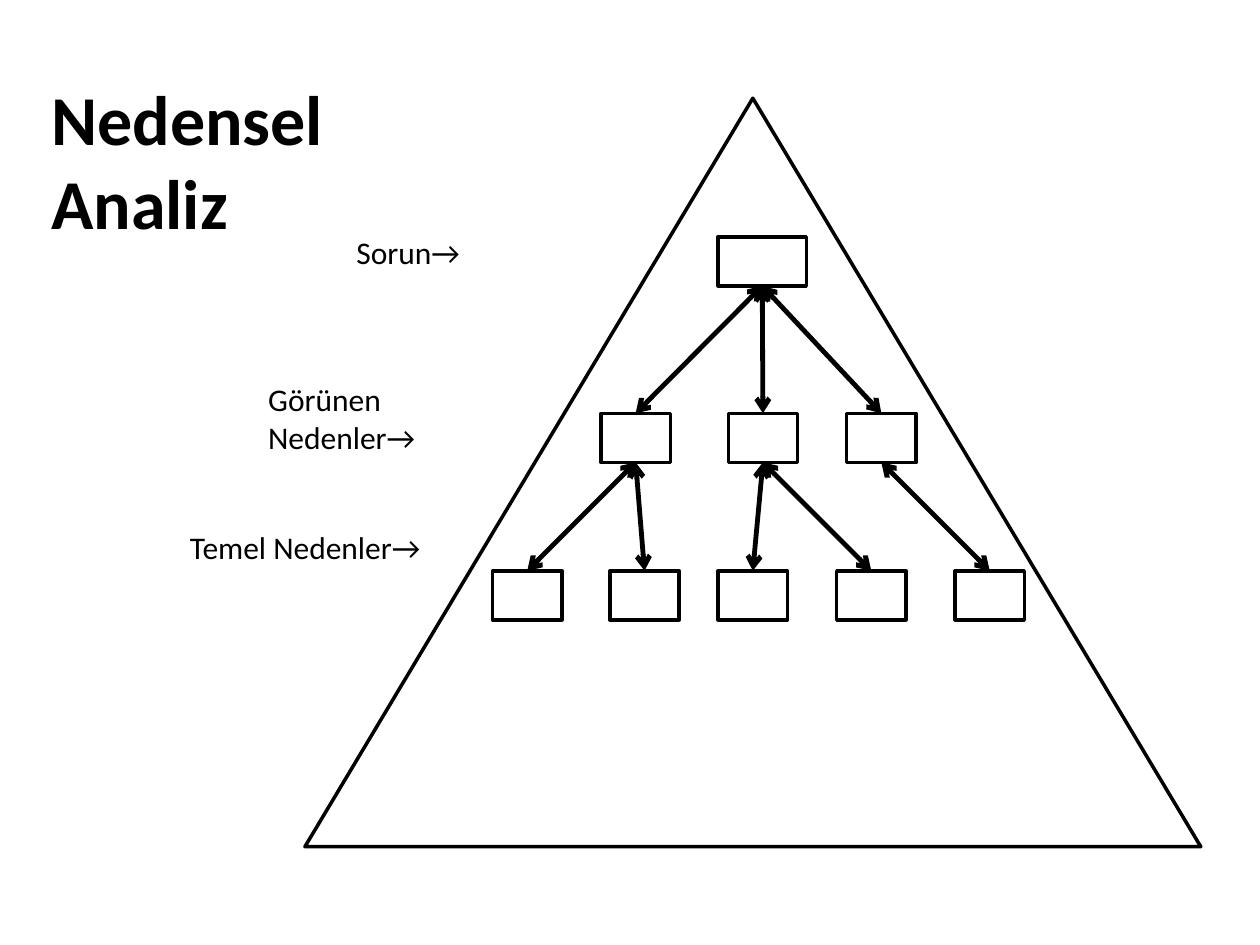
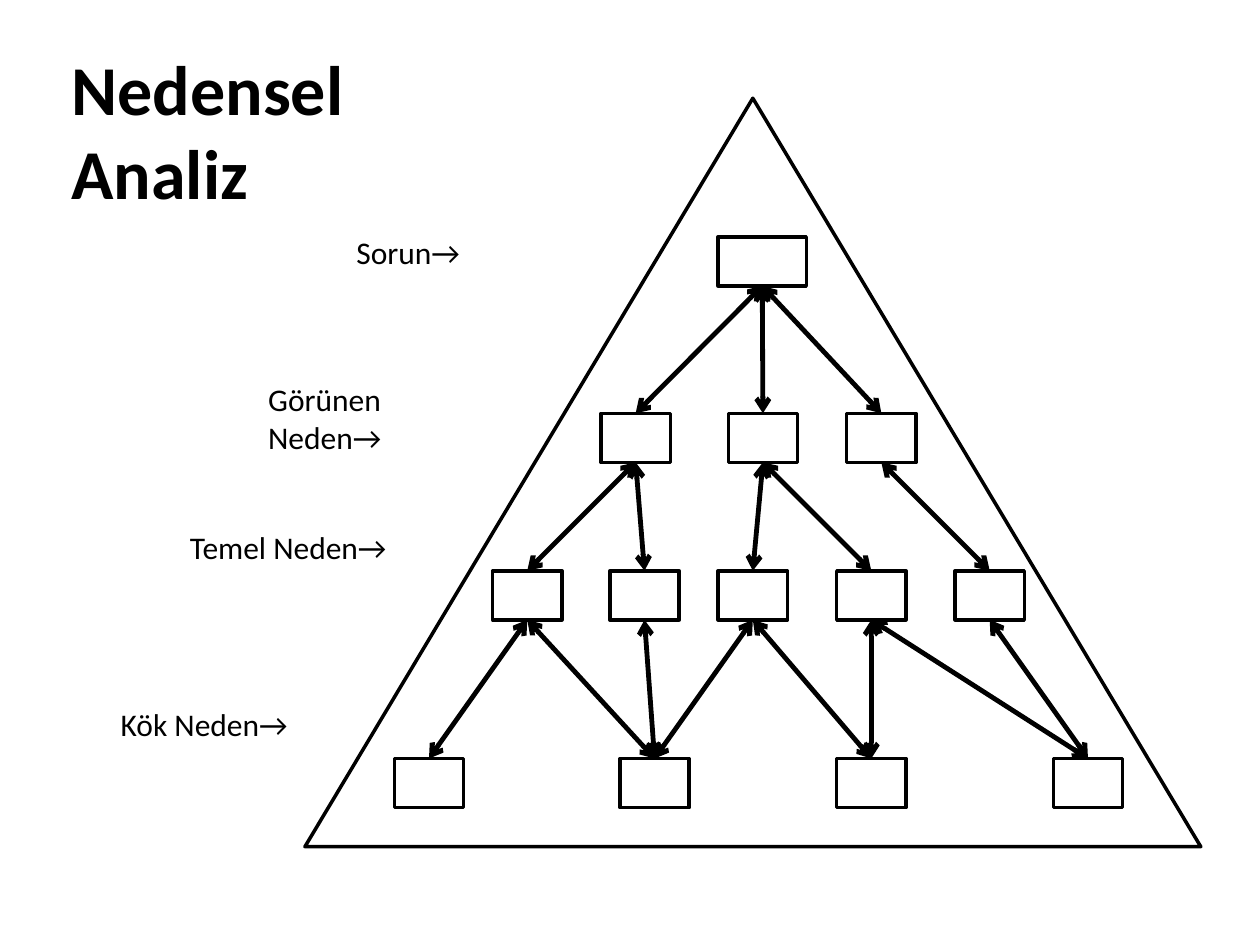
from dataclasses import dataclass

from lxml.etree import SubElement
from pptx import Presentation
from pptx.dml.color import RGBColor
from pptx.enum.shapes import MSO_CONNECTOR as Connector, MSO_SHAPE as Shape
from pptx.enum.text import MSO_AUTO_SIZE as AutoSize
from pptx.oxml.ns import qn
from pptx.util import Inches, Pt


@dataclass(frozen=True)
class Theme:
    ink: RGBColor = RGBColor(0, 0, 0)
    font: str = "Calibri"
    title_size: int = 40
    label_size: int = 18
    outline: float = 2
    arrow: float = 2.75


theme = Theme()
BOTTOM, TOP = 0, 0
BOTTOM = 2
BOX_HEIGHT = 0.39

# Each level: top, box width, left edges of its boxes
LEVELS = [
    (1.88, 0.7, [5.7]),
    (3.28, 0.55, [4.77, 5.78, 6.72]),
    (4.53, 0.55, [3.91, 4.84, 5.7, 6.64, 7.58]),
    (6.02, 0.55, [3.13, 4.92, 6.64, 8.36]),
]
# (box, box one level below) for each pair of neighbouring levels
LINKS = [
    [(0, 0), (0, 1), (0, 2)],
    [(0, 0), (0, 1), (1, 2), (1, 3), (2, 4)],
    [(0, 0), (0, 1), (1, 1), (2, 1), (2, 2), (3, 2), (3, 3), (4, 3)],
]
# Left, top, width, height of the label beside each level
LABEL_PLACES = [
    (2.73, 1.8, 1.95, 0.4),
    (2.03, 2.97, 1.88, 0.71),
    (1.41, 4.14, 2.34, 0.4),
    (0.86, 5.55, 1.56, 0.4),
]
# Title left and top, whether the diagram is grouped, level labels
PAGES = [
    (0.31, 0.55, False, ["Sorun→", "Görünen Nedenler→", "Temel Nedenler→"]),
    (0.47, 0.31, True, ["Sorun→", "Görünen Neden→", "Temel Neden→", "Kök Neden→"]),
]


def add_outline(shapes, kind, *place):
    outline = shapes.add_shape(kind, *map(Inches, place))
    outline.shadow.inherit = False
    outline.fill.background()
    outline.line.color.rgb = theme.ink
    outline.line.width = Pt(theme.outline)
    return outline


def add_text(page, words, place, size, bold=False):
    box = page.shapes.add_textbox(*map(Inches, place))
    frame = box.text_frame
    frame.word_wrap = True
    frame.auto_size = AutoSize.SHAPE_TO_FIT_TEXT
    span = frame.paragraphs[0].add_run()
    span.text = words
    span.font.name = theme.font
    span.font.size = Pt(size)
    span.font.bold = bold
    span.font.color.rgb = theme.ink


deck = Presentation()
deck.slide_width, deck.slide_height = Inches(10), Inches(7.5)

for title_left, title_top, grouped, labels in PAGES:
    page = deck.slides.add_slide(deck.slide_layouts[6])
    diagram = page.shapes.add_group_shape().shapes if grouped else page.shapes
    add_outline(diagram, Shape.ISOSCELES_TRIANGLE, 2.42, 0.78, 7.11, 5.94)

    # One row of cause boxes per label
    rows = [
        [add_outline(diagram, Shape.RECTANGLE, left, top, width, BOX_HEIGHT)
         for left in lefts]
        for top, width, lefts in LEVELS[:len(labels)]
    ]

    # Double-headed arrows between neighbouring rows
    for upper, lower, links in zip(rows, rows[1:], LINKS):
        for effect, cause in links:
            arrow = diagram.add_connector(Connector.STRAIGHT, 0, 0, 0, 0)
            arrow.begin_connect(upper[effect], BOTTOM)
            arrow.end_connect(lower[cause], TOP)
            arrow.line.color.rgb = theme.ink
            arrow.line.width = Pt(theme.arrow)
            line = arrow.line._get_or_add_ln()
            for end in ("a:headEnd", "a:tailEnd"):
                SubElement(line, qn(end), type="arrow")
            SubElement(arrow._element.spPr, qn("a:effectLst"))

    for words, place in zip(labels, LABEL_PLACES):
        add_text(page, words, place, theme.label_size)
    add_text(page, "Nedensel Analiz", (title_left, title_top, 2.73, 1.45),
             theme.title_size, bold=True)

deck.save("out.pptx")
